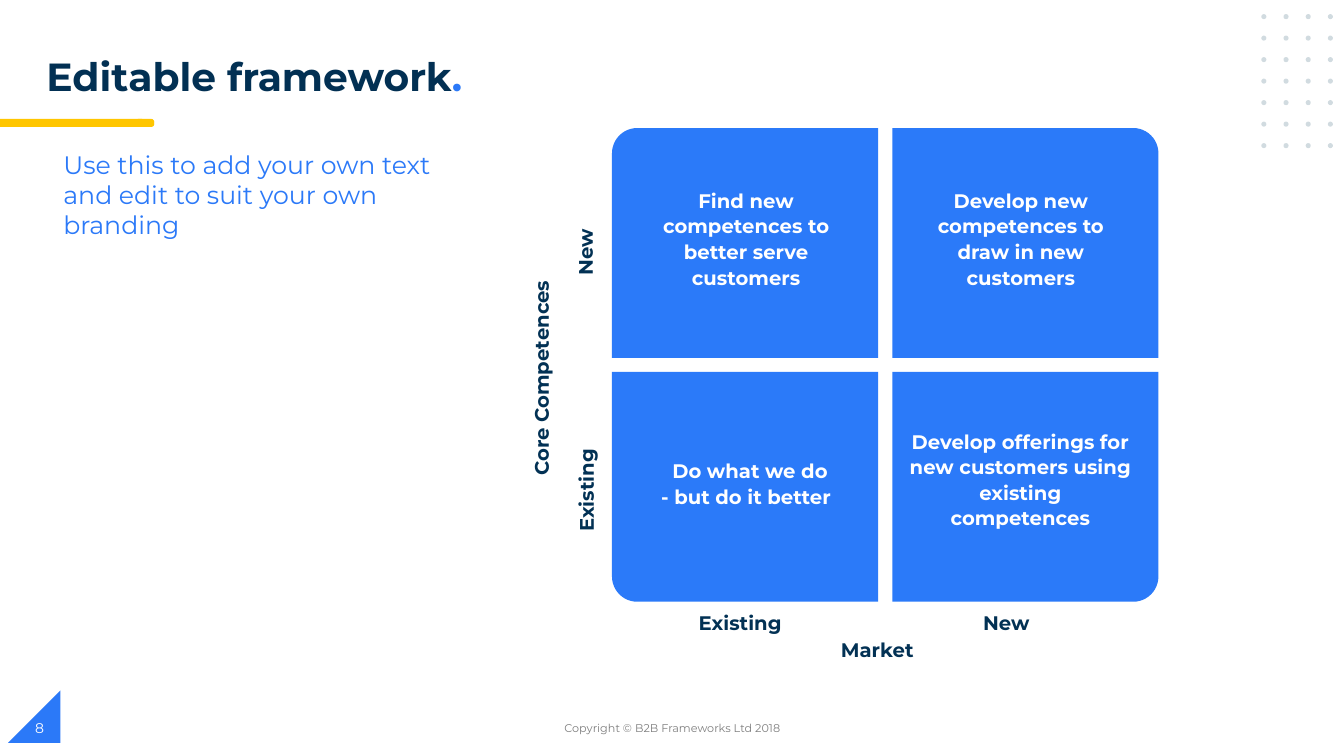
from pptx import Presentation
from pptx.dml.color import RGBColor
from pptx.enum.shapes import MSO_SHAPE as Kind
from pptx.enum.text import MSO_ANCHOR as Anchor, MSO_AUTO_SIZE as Fit, PP_ALIGN as Align
from pptx.util import Inches, Pt

FONT = "Montserrat"
COLORS = {
    "blue": "2B79F8",
    "quad": "2B7AF9",
    "gold": "FFC600",
    "dot": "D1DBE0",
    "navy": "023053",
    "label": "023154",
    "grey": "7F7F7F",
    "white": "FFFFFF",
}
LABELS = [
    ("Existing", 5.37, 4.71, 0.89, 270),
    ("New", 5.55, 2.36, 0.51, 270),
    ("Core Competences", 4.33, 3.56, 2.08, 270),
    ("Existing", 6.93, 6.05, 0.94, 0),
    ("New", 9.75, 6.05, 0.54, 0),
    ("Market", 8.34, 6.32, 0.83, 0),
]
CLAIMS = [
    ("Find new competences to better serve customers", 6.54, 1.84, 1.72),
    ("Develop new competences to draw in new customers", 9.25, 1.84, 1.75),
    ("Develop offerings for new customers using existing competences", 9.02, 4.23, 2.2),
]


def paint(name):
    return RGBColor.from_string(COLORS[name])


def style(font, size, color, bold=False):
    font.name = FONT
    font.size = Pt(size)
    font.bold = bold
    font.color.rgb = paint(color)


def set_frame(frame, pad, anchor=Anchor.TOP):
    frame.word_wrap = True
    frame.auto_size = Fit.NONE
    frame.vertical_anchor = anchor
    frame.margin_left = frame.margin_right = Inches(pad[0])
    frame.margin_top = frame.margin_bottom = Inches(pad[1])


def add_form(slide, kind, box, color, flip=()):
    form = slide.shapes.add_shape(kind, *map(Inches, box))
    form.shadow.inherit = False
    form.fill.solid()
    form.fill.fore_color.rgb = paint(color)
    form.line.fill.background()
    for side in flip:
        form._element.spPr.xfrm.set(side, "1")
    return form


def add_text(slide, lines, box, size, color, bold=False, align=Align.LEFT,
             pad=(0.1, 0.05), anchor=Anchor.TOP, space=None, turn=0):
    area = slide.shapes.add_textbox(*map(Inches, box))
    area.rotation = turn
    frame = area.text_frame
    set_frame(frame, pad, anchor)
    frame.text = "\n".join(lines)
    for para in frame.paragraphs:
        para.alignment = align
        para.line_spacing = space
        style(para.font, size, color, bold)
    return frame


def add_title(slide):
    title = slide.shapes.title
    title.left, title.top = Inches(0.36), Inches(0.52)
    title.width, title.height = Inches(5.64), Inches(0.6)
    set_frame(title.text_frame, (0.1, 0.05))
    para = title.text_frame.paragraphs[0]
    para.alignment = Align.LEFT
    para.line_spacing = 0.9
    for text, color in (("Editable framework", "navy"), (".", "blue")):
        run = para.add_run()
        run.text = text
        style(run.font, 28, color, True)


def add_decor(slide):
    add_form(slide, Kind.RIGHT_TRIANGLE, (0.08, 6.85, 0.52, 0.52), "blue", ["flipH"])
    for top in (1.18, 1.2):
        add_form(slide, Kind.FLOWCHART_TERMINATOR, (1.34, top, 0.19, 0.06), "gold")
        add_form(slide, Kind.RECTANGLE, (0, top, 1.41, 0.06), "gold")
    for row in range(7):
        for col in range(4):
            box = (12.51 + 0.22 * col, 0.14 + 1.28 * row / 6, 0.05, 0.05)
            add_form(slide, Kind.OVAL, box, "dot")


def add_grid(slide):
    wide, high, gap = 2.64, 2.28, 0.14
    for row in range(2):
        for col in range(2):
            box = (6.07 + col * (wide + gap), 1.27 + row * (high + gap), wide, high)
            flip = ["flipH"] * (1 - col) + ["flipV"] * row
            quad = add_form(slide, Kind.ROUND_1_RECTANGLE, box, "quad", flip)
            quad.adjustments[0] = 0.11


def main():
    deck = Presentation()
    deck.slide_width, deck.slide_height = Inches(13.33), Inches(7.5)
    slide = deck.slides.add_slide(deck.slide_layouts[5])
    add_decor(slide)
    add_title(slide)
    add_text(slide, ["Copyright © B2B Frameworks Ltd 2018"], (4.42, 7.02, 4.5, 0.4),
             8, "grey", align=Align.CENTER, anchor=Anchor.MIDDLE)
    add_text(slide, ["8"], (0.25, 7.02, 3, 0.4), 10, "white", anchor=Anchor.MIDDLE)
    add_text(slide, ["Use this to add your own text and edit to suit your own branding"],
             (0.53, 1.43, 3.89, 1.52), 18, "blue")
    add_grid(slide)
    for text, left, top, wide, turn in LABELS:
        add_text(slide, [text], (left, top, wide, 0.24), 14, "label", True,
                 pad=(0, 0 if turn else 0.01), turn=turn)
    for text, left, top, wide in CLAIMS:
        add_text(slide, [text], (left, top, wide, 1.02), 14, "white", True,
                 Align.CENTER, (0, 0.01), space=1.09)
    frame = add_text(slide, ["Do what we do", "- but do it better"],
                     (6.43, 4.52, 1.94, 0.53), 14, "white", True,
                     Align.CENTER, (0, 0.03))
    first, last = frame.paragraphs
    first._p.get_or_add_pPr().set("marL", str(Inches(0.08)))
    last.space_before = Pt(2)
    deck.save("out.pptx")


if __name__ == "__main__":
    main()
